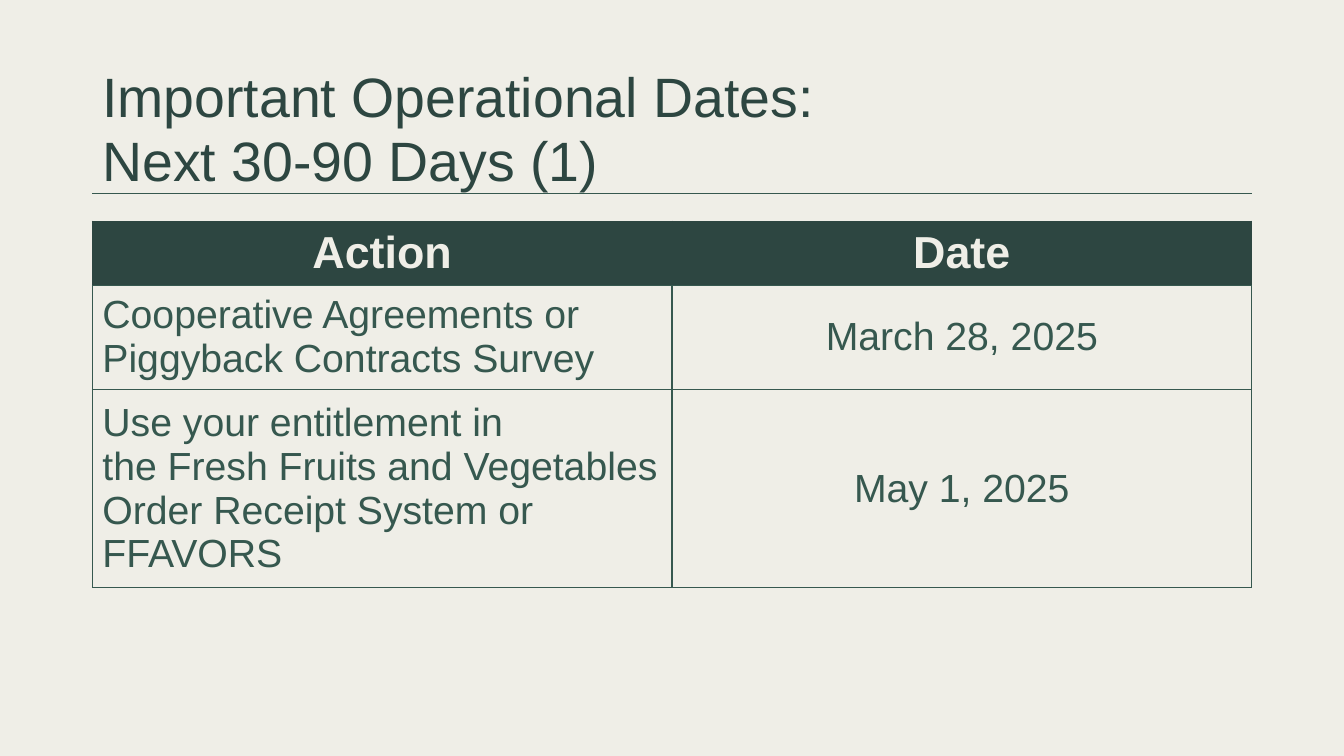
from dataclasses import dataclass

import pptx
import pptx.dml.color
import pptx.enum.shapes
import pptx.enum.text
import pptx.oxml
import pptx.oxml.ns
import pptx.util

Pt = pptx.util.Pt
RGBColor = pptx.dml.color.RGBColor
Align = pptx.enum.text.PP_ALIGN
Anchor = pptx.enum.text.MSO_ANCHOR

CREAM = RGBColor(0xEF, 0xEE, 0xE7)
FOREST = RGBColor(0x2D, 0x46, 0x41)
GREEN = RGBColor(0x36, 0x58, 0x4F)

FONT = "Arial"
LEFT, WIDTH = 66, 828
RULE_TOP = 138
TABLE_TOP = 158
NBSP = chr(160)


@dataclass(frozen=True)
class RowStyle:
    size: float
    color: RGBColor
    bold: bool
    action_align: Align
    fill: RGBColor | None
    edge: RGBColor


@dataclass(frozen=True)
class DateRow:
    action: str
    date: str
    height: float
    style: RowStyle


HEADER = RowStyle(32, CREAM, True, Align.CENTER, FOREST, FOREST)
BODY = RowStyle(28, GREEN, False, Align.LEFT, None, GREEN)

ROWS = [
    DateRow("Action", "Date", 43, HEADER),
    DateRow("Cooperative Agreements or Piggyback Contracts Survey", "March 28, 2025", 70, BODY),
    DateRow(
        f"Use your entitlement in the{NBSP}Fresh Fruits and Vegetables "
        "Order Receipt System or FFAVORS",
        "May 1, 2025",
        132,
        BODY,
    ),
]


def style_runs(paragraph, size: float, color: RGBColor, bold: bool = False) -> None:
    for run in paragraph.runs:
        run.font.name = FONT
        run.font.size = Pt(size)
        run.font.bold = bold
        run.font.color.rgb = color


def add_title(slide) -> None:
    title = slide.shapes.add_textbox(Pt(LEFT), Pt(54), Pt(WIDTH), Pt(78))
    frame = title.text_frame
    frame.word_wrap = True
    frame.vertical_anchor = Anchor.MIDDLE
    frame.text = "Important Operational Dates:"
    heading = frame.paragraphs[0]
    heading.add_line_break()
    heading.add_run().text = "Next 30-90 Days (1)"
    heading.line_spacing = 0.97
    style_runs(heading, 39.6, FOREST)


def add_rule(slide) -> None:
    rule = slide.shapes.add_connector(
        pptx.enum.shapes.MSO_CONNECTOR.STRAIGHT,
        Pt(LEFT), Pt(RULE_TOP), Pt(LEFT + WIDTH), Pt(RULE_TOP),
    )
    rule.line.color.rgb = GREEN
    rule.line.width = Pt(0.75)
    effects = pptx.oxml.parse_xml(f"<a:effectLst {pptx.oxml.ns.nsdecls('a')}/>")
    rule._element.spPr.append(effects)


def add_borders(cell, edge: RGBColor) -> None:
    """Draw 1 pt borders; the bottom one is always green."""
    properties = cell._tc.get_or_add_tcPr()
    for side, color in {"L": edge, "R": edge, "T": edge, "B": GREEN}.items():
        properties.append(pptx.oxml.parse_xml(
            f"<a:ln{side} {pptx.oxml.ns.nsdecls('a')} w=\"{Pt(1)}\">"
            f'<a:solidFill><a:srgbClr val="{color}"/></a:solidFill></a:ln{side}>'
        ))


def fill_cell(cell, text: str, align: Align, style: RowStyle) -> None:
    add_borders(cell, style.edge)
    if style.fill is None:
        cell.fill.background()
    else:
        cell.fill.solid()
        cell.fill.fore_color.rgb = style.fill
    cell.vertical_anchor = Anchor.MIDDLE
    cell.text_frame.text = text
    paragraph = cell.text_frame.paragraphs[0]
    paragraph.alignment = align
    style_runs(paragraph, style.size, style.color, style.bold)


def add_dates_table(slide) -> None:
    height = sum(row.height for row in ROWS)
    dates = slide.shapes.add_table(
        len(ROWS), 2, Pt(LEFT), Pt(TABLE_TOP), Pt(WIDTH), Pt(height)
    ).table
    dates.horz_banding = False
    for index, row in enumerate(ROWS):
        dates.rows[index].height = Pt(row.height)
        fill_cell(dates.cell(index, 0), row.action, row.style.action_align, row.style)
        fill_cell(dates.cell(index, 1), row.date, Align.CENTER, row.style)


def main() -> None:
    deck = pptx.Presentation()
    deck.slide_width, deck.slide_height = Pt(960), Pt(540)
    slide = deck.slides.add_slide(deck.slide_layouts[6])
    slide.background.fill.solid()
    slide.background.fill.fore_color.rgb = CREAM
    add_rule(slide)
    add_title(slide)
    add_dates_table(slide)
    deck.save("out.pptx")


if __name__ == "__main__":
    main()
